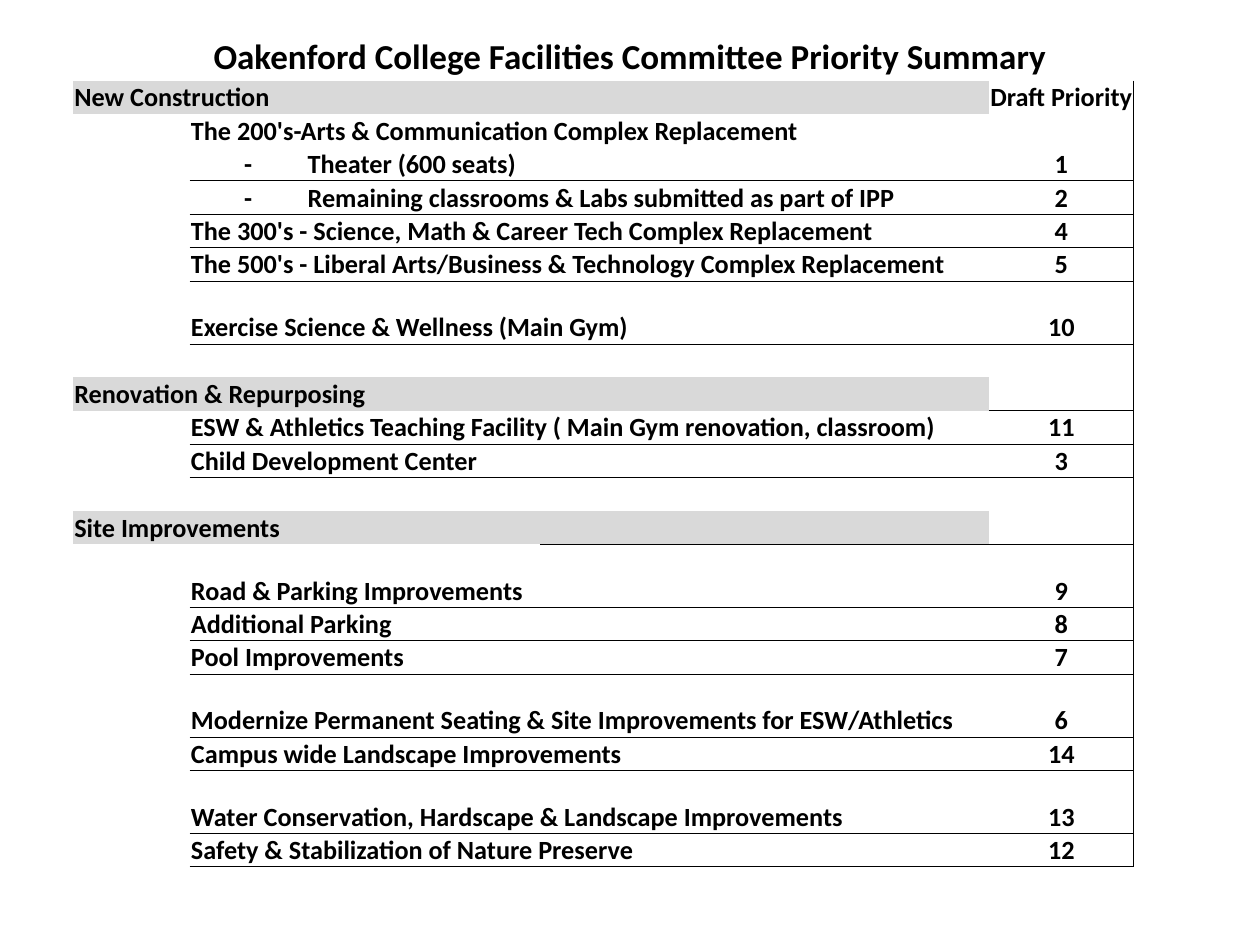
from lxml import etree
from pptx import Presentation
from pptx.dml.color import RGBColor
from pptx.enum.text import MSO_ANCHOR, PP_ALIGN
from pptx.oxml.ns import qn
from pptx.util import Inches, Pt

BLACK = RGBColor(0x00, 0x00, 0x00)
BAND_GREY = RGBColor(0xD9, 0xD9, 0xD9)
LEFT, CENTER = PP_ALIGN.LEFT, PP_ALIGN.CENTER
MIDDLE, BOTTOM = MSO_ANCHOR.MIDDLE, MSO_ANCHOR.BOTTOM
NO_STYLE = "{2D5ABB26-0587-4C30-8999-92F81FD0307C}"
FONT = "Calibri"
BODY_SIZE = 15
LINE_WIDTH = Pt(0.5)

# Grid: seven equal columns, one narrower, then the priority column
TABLE_LEFT, TABLE_TOP, TABLE_WIDTH, TABLE_HEIGHT = 0.58, 0.64, 8.42, 6.24
STEP = 0.11 * TABLE_WIDTH
PRIORITY_WIDTH = 1.15
COLUMNS = [STEP] * 7 + [TABLE_WIDTH - 7 * STEP - PRIORITY_WIDTH, PRIORITY_WIDTH]
PRIORITY = len(COLUMNS) - 1
NO_LINE = len(COLUMNS)

# Four tall rows; sixteen short ones share the remaining height
TALL = 0.5
SHORT = (TABLE_HEIGHT - 4 * TALL) / 16

# Each row: height, first underlined column, priority, {column: (text, span)}
ROWS = [
    (SHORT, NO_LINE, "Draft Priority", {0: ("New Construction", 2)}),
    (SHORT, NO_LINE, "", {1: ("The 200's-Arts & Communication Complex Replacement", 6)}),
    (SHORT, 1, "1", {1: ("-", 1), 2: ("Theater (600 seats)", 2)}),
    (SHORT, 1, "2", {1: ("-", 1),
                     2: ("Remaining classrooms & Labs submitted as part of IPP", 6)}),
    (SHORT, 1, "4", {1: ("The 300's - Science, Math & Career Tech Complex Replacement", 7)}),
    (SHORT, 1, "5", {1: ("The 500's - Liberal Arts/Business & Technology Complex Replacement", 7)}),
    (TALL, 1, "10", {1: ("Exercise Science & Wellness (Main Gym)", 4)}),
    (SHORT, NO_LINE, "", {}),
    (SHORT, PRIORITY, "", {0: ("Renovation & Repurposing", 3)}),
    (SHORT, 1, "11", {1: ("ESW & Athletics Teaching Facility ( Main Gym renovation, classroom)", 7)}),
    (SHORT, 1, "3", {1: ("Child Development Center", 3)}),
    (SHORT, NO_LINE, "", {}),
    (SHORT, 4, "", {0: ("Site Improvements", 3)}),
    (TALL, 1, "9", {1: ("Road & Parking Improvements", 3)}),
    (SHORT, 1, "8", {1: ("Additional Parking", 2)}),
    (SHORT, 1, "7", {1: ("Pool Improvements", 2)}),
    (TALL, 1, "6", {1: ("Modernize Permanent Seating & Site Improvements for ESW/Athletics", 7)}),
    (SHORT, 1, "14", {1: ("Campus wide Landscape Improvements", 4)}),
    (TALL, 1, "13", {1: ("Water Conservation, Hardscape & Landscape Improvements", 6)}),
    (SHORT, 1, "12", {1: ("Safety & Stabilization of Nature Preserve", 5)}),
]


def write_text(paragraph, text, size, align):
    paragraph.alignment = align
    run = paragraph.add_run()
    run.text = text
    for name, value in {"name": FONT, "size": Pt(size), "bold": True}.items():
        setattr(run.font, name, value)
    run.font.color.rgb = BLACK


def add_border(cell, side, shown):
    line = etree.SubElement(cell._tc.get_or_add_tcPr(), qn(f"a:{side}"), w=str(LINE_WIDTH))
    if shown:
        fill = etree.SubElement(line, qn("a:solidFill"))
        etree.SubElement(fill, qn("a:srgbClr"), val=str(BLACK))
    else:
        etree.SubElement(line, qn("a:noFill"))


prs = Presentation()
prs.slide_width, prs.slide_height = Inches(10), Inches(7.5)
slide = prs.slides.add_slide(prs.slide_layouts[6])

# Title
heading = slide.shapes.add_textbox(Inches(0.5), Inches(0.3), Inches(9), Inches(0.28)).text_frame
heading_format = {"word_wrap": True, "vertical_anchor": MIDDLE, "margin_left": 0,
                  "margin_right": 0, "margin_top": 0, "margin_bottom": 0}
for name, value in heading_format.items():
    setattr(heading, name, value)
write_text(heading.paragraphs[0],
           "Oakenford College Facilities Committee Priority Summary", 20, CENTER)

# Empty table on the grid
priorities = slide.shapes.add_table(
    len(ROWS), len(COLUMNS), Inches(TABLE_LEFT), Inches(TABLE_TOP),
    Inches(TABLE_WIDTH), Inches(TABLE_HEIGHT)).table
priorities.first_row = priorities.horz_banding = False
priorities._tbl.tblPr.find(qn("a:tableStyleId")).text = NO_STYLE
for column, width in zip(priorities.columns, COLUMNS):
    column.width = Inches(width)

# Cells: merges, borders, fills, text
cell_format = {"vertical_anchor": BOTTOM, "margin_left": Inches(0.01),
               "margin_right": Inches(0.01), "margin_top": Inches(0.01), "margin_bottom": 0}
line_above = NO_LINE
for r, (height, line_start, priority, labels) in enumerate(ROWS):
    priorities.rows[r].height = Inches(height)
    for c, (label, span) in labels.items():
        if span > 1:
            priorities.cell(r, c).merge(priorities.cell(r, c + span - 1))
    texts = {c: label for c, (label, span) in labels.items()}
    texts[PRIORITY] = priority
    for c in range(len(COLUMNS)):
        cell = priorities.cell(r, c)
        for name, value in cell_format.items():
            setattr(cell, name, value)
        add_border(cell, "lnR", c == PRIORITY)
        add_border(cell, "lnT", c >= line_above)
        add_border(cell, "lnB", c >= line_start)
        if 0 in labels and c < PRIORITY:
            cell.fill.solid()
            cell.fill.fore_color.rgb = BAND_GREY
        else:
            cell.fill.background()
        paragraph = cell.text_frame.paragraphs[0]
        text = texts.get(c, "")
        if text:
            write_text(paragraph, text, BODY_SIZE,
                       CENTER if c == PRIORITY or text == "-" else LEFT)
        else:
            paragraph._p.get_or_add_endParaRPr().set("sz", str(BODY_SIZE * 100))
    line_above = line_start

prs.save("out.pptx")
